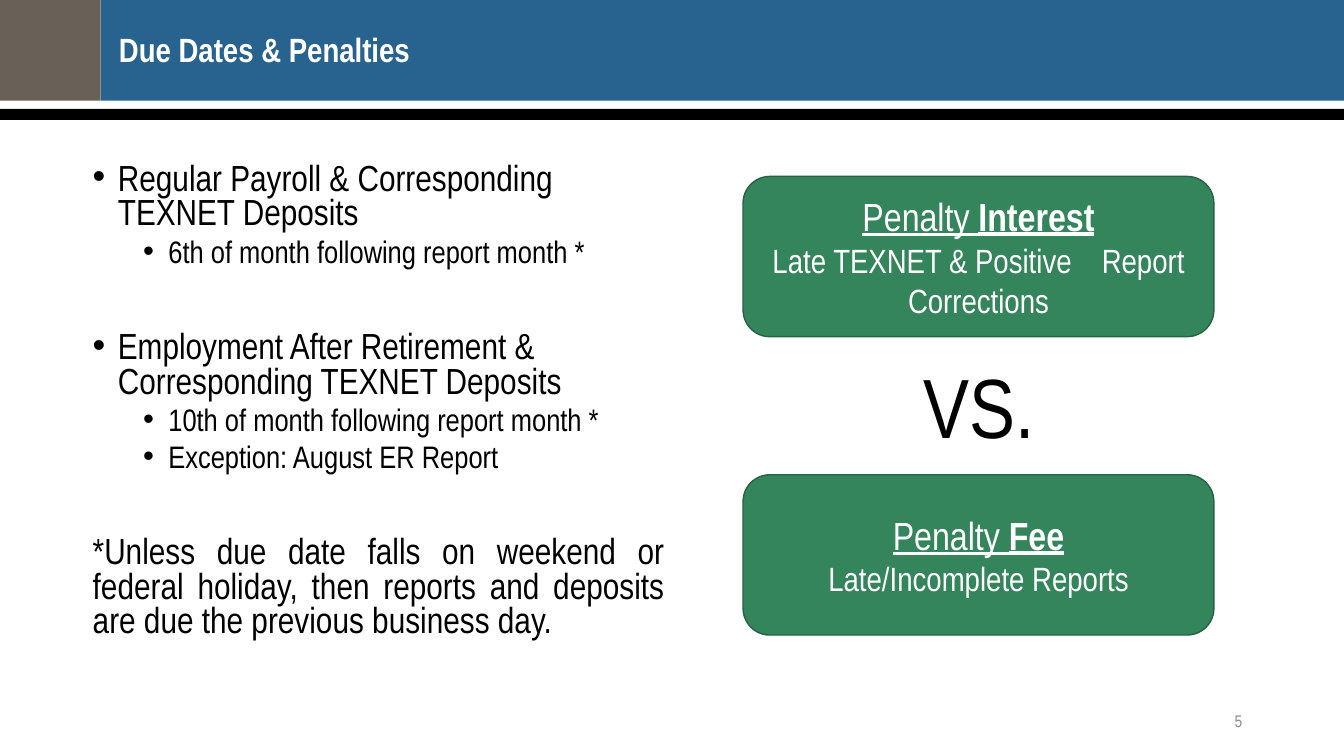
import pptx
import pptx.dml.color
import pptx.enum.shapes
import pptx.enum.text
import pptx.util
from lxml import etree

Inches = pptx.util.Inches
Pt = pptx.util.Pt
RGBColor = pptx.dml.color.RGBColor
Align = pptx.enum.text.PP_ALIGN
Anchor = pptx.enum.text.MSO_ANCHOR
Preset = pptx.enum.shapes.MSO_SHAPE

BLUE = RGBColor(0x28, 0x62, 0x8E)
TAUPE = RGBColor(0x69, 0x60, 0x57)
GREEN = RGBColor(0x34, 0x85, 0x5B)
DARK_GREEN = RGBColor(0x26, 0x62, 0x43)
GRAY = RGBColor(0x8C, 0x8C, 0x8C)
BLACK = RGBColor(0, 0, 0)
WHITE = RGBColor(0xFF, 0xFF, 0xFF)
FONT = "Arial Narrow"
MAIN_SIZE, SUB_SIZE = 25.9, 22.2
SECTION_GAP = 44

# Text, level (None for no bullet), space before
DUE_DATES = [
    ("Regular Payroll & Corresponding TEXNET Deposits", 0, 0),
    ("6th of month following report month *", 1, 5),
    ("Employment After Retirement & Corresponding TEXNET Deposits", 0, SECTION_GAP),
    ("10th of month following report month *", 1, 5),
    ("Exception: August ER Report", 1, 5),
    ("*Unless due date falls on weekend or federal holiday, then reports "
     "and deposits are due the previous business day.", None, SECTION_GAP),
]


def add_span(para, text, size, color, bold=False, underline=False):
    span = para.add_run()
    span.text = text
    span.font.name = FONT
    span.font.size = Pt(size)
    span.font.color.rgb = color
    span.font.bold = bold
    span.font.underline = underline
    return span


def add_shape(page, preset, place, fill, line=None):
    shape = page.shapes.add_shape(preset, *map(Inches, place))
    shape.shadow.inherit = False
    shape.fill.solid()
    shape.fill.fore_color.rgb = fill
    if line is None:
        shape.line.fill.background()
    else:
        shape.line.color.rgb = line
        shape.line.width = Pt(1)
    return shape


def add_text_frame(page, place, inset=True):
    frame = page.shapes.add_textbox(*map(Inches, place)).text_frame
    frame.word_wrap = True
    if not inset:
        frame.margin_left = frame.margin_right = 0
        frame.margin_top = frame.margin_bottom = 0
    return frame


def add_label(page, place, text, size, color, align, anchor=Anchor.TOP):
    frame = add_text_frame(page, place)
    frame.vertical_anchor = anchor
    para = frame.paragraphs[0]
    para.alignment = align
    add_span(para, text, size, color)


def set_bullet(para, level):
    properties = para._p.get_or_add_pPr()
    properties.set("marL", str(Inches(0.25 + 0.5 * level)))
    properties.set("indent", str(Inches(-0.25)))
    namespace = pptx.oxml.ns.nsdecls("a").split('"')[1]
    font = etree.SubElement(properties, f"{{{namespace}}}buFont")
    font.set("typeface", "Arial")
    bullet = etree.SubElement(properties, f"{{{namespace}}}buChar")
    bullet.set("char", "•")


def add_due_dates(page):
    frame = add_text_frame(page, (0.92, 1.62, 5.67, 5.13), inset=False)
    for index, (text, level, gap) in enumerate(DUE_DATES):
        para = frame.add_paragraph() if index else frame.paragraphs[0]
        if level is None:
            para.alignment = Align.JUSTIFY
        else:
            para.level = level
            set_bullet(para, level)
        para.line_spacing = 0.8
        para.space_before = Pt(gap)
        add_span(para, text, SUB_SIZE if level == 1 else MAIN_SIZE, BLACK)


def add_penalty_card(page, top, kind):
    card = add_shape(page, Preset.ROUNDED_RECTANGLE, (7.37, top, 4.67, 1.59),
                     GREEN, DARK_GREEN)
    frame = card.text_frame
    frame.word_wrap = True
    frame.vertical_anchor = Anchor.MIDDLE
    heading = frame.paragraphs[0]
    add_span(heading, "Penalty ", 28, WHITE, underline=True)
    add_span(heading, kind, 28, WHITE, bold=True, underline=True)
    detail = frame.add_paragraph()
    heading.alignment = detail.alignment = Align.CENTER
    return detail


def main():
    deck = pptx.Presentation()
    deck.slide_width, deck.slide_height = Inches(13.33), Inches(7.5)
    page = deck.slides.add_slide(deck.slide_layouts[6])

    # Header band
    add_shape(page, Preset.RECTANGLE, (1, 0, 12.33, 1), BLUE)
    add_shape(page, Preset.RECTANGLE, (0, 0, 1, 1), TAUPE)
    add_shape(page, Preset.RECTANGLE, (0, 1.08, 13.33, 0.11), BLACK)
    title = add_text_frame(page, (1.18, 0.33, 11.23, 0.56), inset=False).paragraphs[0]
    title.line_spacing = 0.9
    add_span(title, "Due Dates & Penalties", 24, WHITE, bold=True)

    # Due dates on the left
    add_due_dates(page)

    # Penalty comparison on the right
    detail = add_penalty_card(page, 1.75, "Interest")
    add_span(detail, "Late TEXNET & Positive", 24, WHITE)
    wide_space = add_span(detail, " ", 24, WHITE)
    wide_space.font._element.set("spc", "1600")
    add_span(detail, "Report Corrections", 24, WHITE)
    add_label(page, (8.73, 3.47, 1.97, 1.11), "VS.", 60, BLACK, Align.CENTER)
    detail = add_penalty_card(page, 4.71, "Fee")
    add_span(detail, "Late/Incomplete Reports", 24, WHITE)

    # Page number
    add_label(page, (9.42, 6.95, 3, 0.4), "5", 12, GRAY, Align.RIGHT, Anchor.MIDDLE)

    deck.save("out.pptx")


if __name__ == "__main__":
    main()
